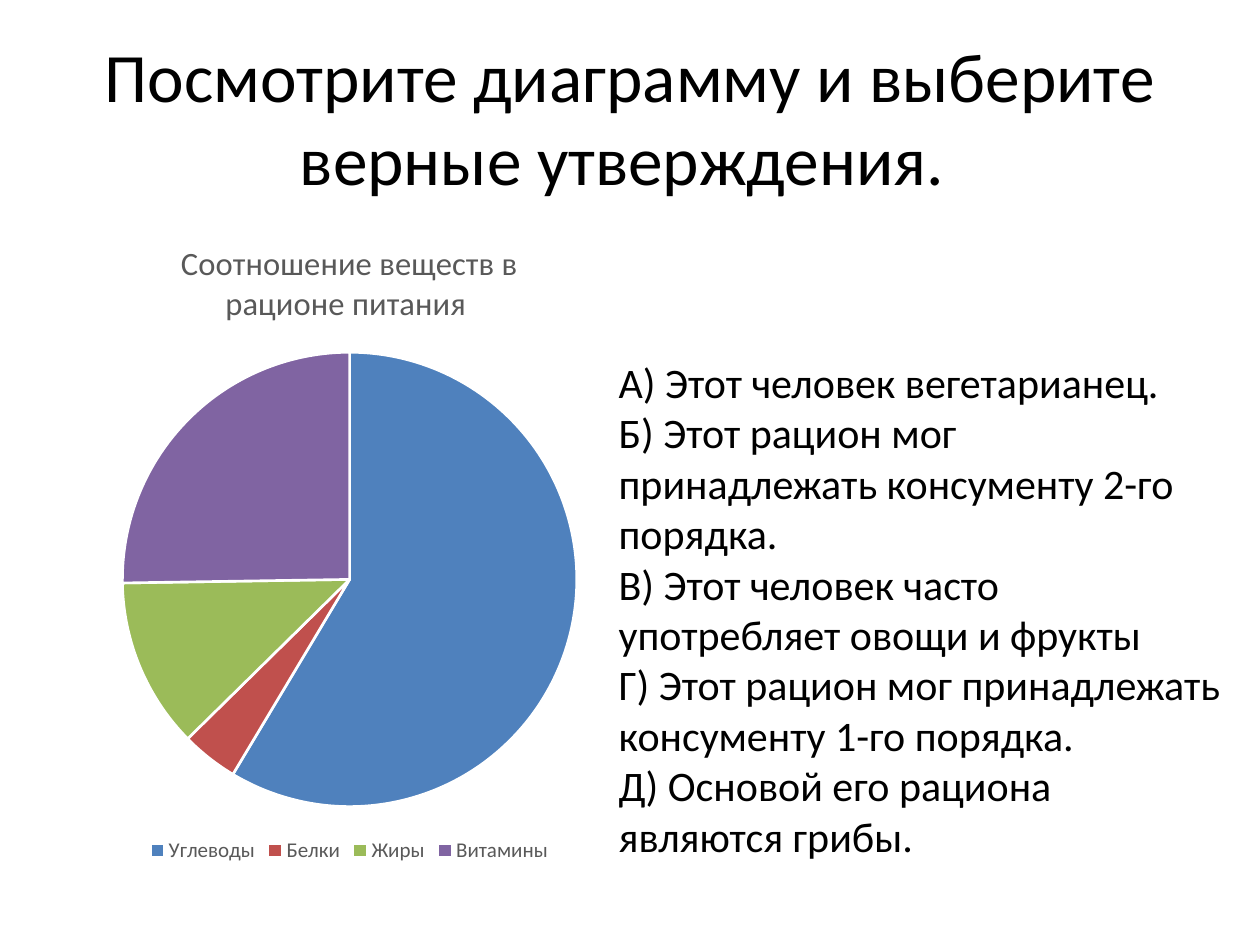
from lxml.etree import SubElement
from pptx import Presentation
from pptx.chart.data import CategoryChartData as Data
from pptx.dml.color import RGBColor
from pptx.enum.chart import XL_CHART_TYPE as Kind, XL_LEGEND_POSITION as Side
from pptx.enum.text import MSO_ANCHOR as Anchor, MSO_AUTO_SIZE as Fit, PP_ALIGN as Align
from pptx.oxml.ns import qn
from pptx.util import Inches, Pt

HEAD = "Посмотрите диаграмму и выберите верные утверждения. "
NAME = "Соотношение веществ в рационе питания "
PARTS = [
    ("Углеводы", 58, "4F81BD"),
    ("Белки", 4, "C0504D"),
    ("Жиры", 12, "9BBB59"),
    ("Витамины", 25, "8064A2"),
]
CLAIMS = [
    "А) Этот человек вегетарианец.",
    "Б) Этот рацион мог принадлежать консументу 2-го порядка.",
    "В) Этот человек часто употребляет овощи и фрукты",
    "Г) Этот рацион мог принадлежать консументу 1-го порядка.",
    "Д) Основой его рациона являются грибы.",
]


def style(font, size, color):
    font.name, font.size, font.bold = "Calibri", Pt(size), False
    font.color.rgb = RGBColor.from_string(color)


def place(shape, *box):
    shape.left, shape.top, shape.width, shape.height = map(Inches, box)


def fill_text(shape, lines, size, align, anchor):
    """Write one unbulleted paragraph per line."""
    frame = shape.text_frame
    frame.text = "\n".join(lines)
    frame.word_wrap = True
    frame.auto_size = Fit.NONE
    frame.vertical_anchor = anchor
    for para in frame.paragraphs:
        props = para._p.get_or_add_pPr()
        props.set("marL", "0")
        props.set("indent", "0")
        SubElement(props, qn("a:buNone"))
        para.alignment = align
        para.space_before = Pt(0)
        style(para.font, size, "000000")


def add_pie(slide, *box):
    names, values, colors = zip(*PARTS)
    data = Data()
    data.categories = names
    data.add_series(NAME, values)
    chart = slide.shapes.add_chart(Kind.PIE, *map(Inches, box), data).chart
    style(chart.font, 10, "000000")

    title = chart.chart_title
    title.include_in_layout = False
    title.text_frame.text = NAME
    style(title.text_frame.paragraphs[0].font, 18.6, "595959")

    chart.has_legend = True
    chart.legend.position = Side.BOTTOM
    chart.legend.include_in_layout = False
    style(chart.legend.font, 12, "595959")

    plot = chart.plots[0]
    plot.vary_by_categories = True
    for i, color in enumerate(colors):
        look = plot.series[0].points[i].format
        look.fill.solid()
        look.fill.fore_color.rgb = RGBColor.from_string(color)
        look.line.width = Pt(1.5)
        look.line.color.rgb = RGBColor.from_string("FFFFFF")


def main():
    deck = Presentation()
    deck.slide_width, deck.slide_height = Inches(10), Inches(7.5)
    slide = deck.slides.add_slide(deck.slide_layouts[1])
    title, body = slide.placeholders
    place(title, 0.5, 0.3, 9, 1.25)
    fill_text(title, [HEAD], 39.6, Align.CENTER, Anchor.MIDDLE)
    add_pie(slide, 0.43, 1.7, 4.69, 5.19)
    place(body, 4.81, 2.78, 5, 4.14)
    fill_text(body, CLAIMS, 24, Align.LEFT, Anchor.TOP)
    deck.save("out.pptx")


if __name__ == "__main__":
    main()
